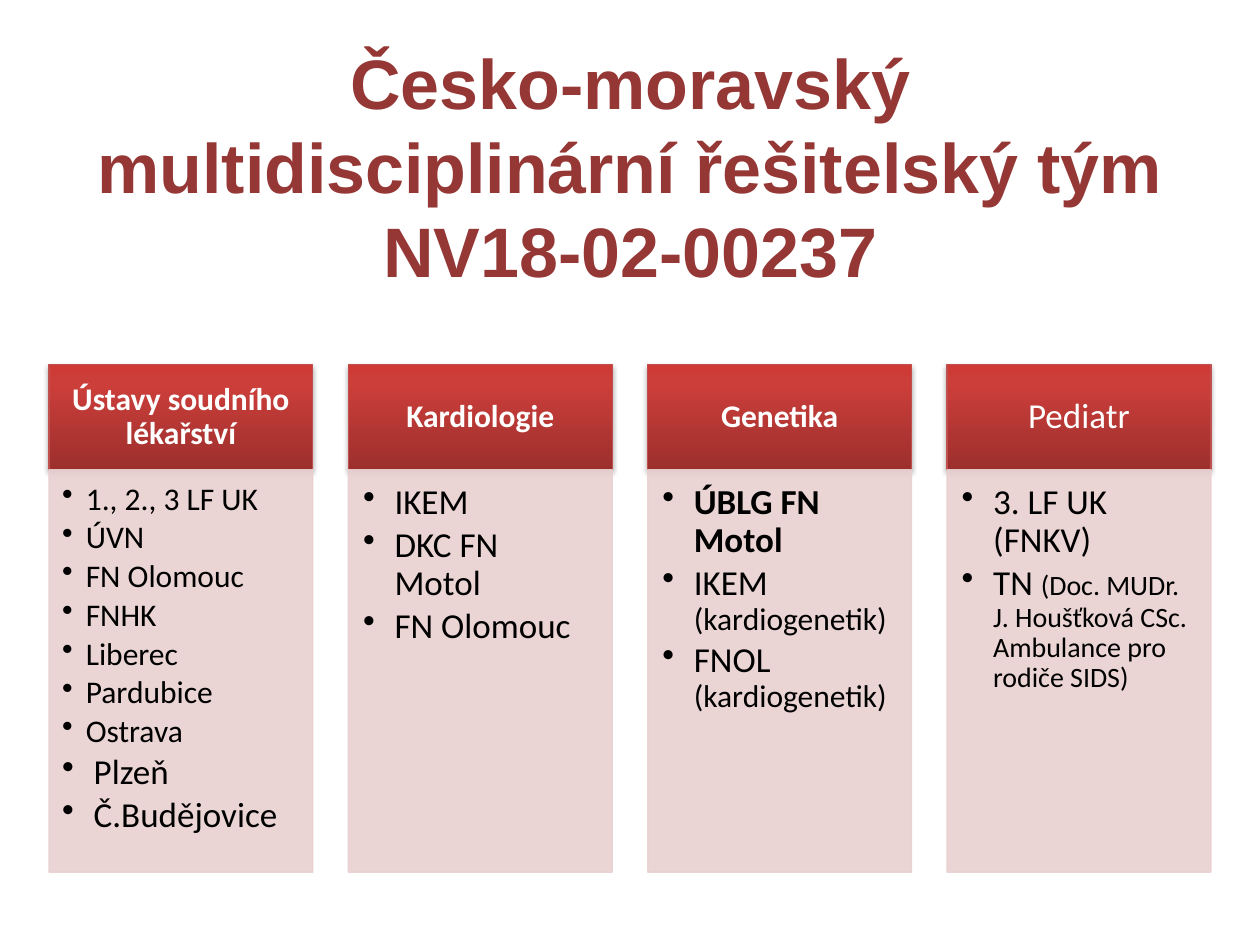
from pptx import Presentation
from pptx.dml.color import RGBColor
from pptx.enum.shapes import MSO_SHAPE
from pptx.enum.text import MSO_ANCHOR, PP_ALIGN
from pptx.oxml import parse_xml
from pptx.oxml.ns import nsdecls, qn
from pptx.oxml.xmlchemy import OxmlElement
from pptx.util import Pt

RECTANGLE = MSO_SHAPE.RECTANGLE
TOP, MIDDLE = MSO_ANCHOR.TOP, MSO_ANCHOR.MIDDLE
LEFT, CENTER = PP_ALIGN.LEFT, PP_ALIGN.CENTER

SLIDE_WIDTH, SLIDE_HEIGHT = 720, 540
SIDE_MARGIN, COLUMN_WIDTH = 28, 150.8
HEADER_TOP, HEADER_HEIGHT, BODY_HEIGHT = 208.4, 60, 230
HEADER_STOPS = [(0, "9C2F2D"), (80, "CB3E3A"), (100, "CE3B37")]

COLUMNS = [
    (("Ústavy soudního lékařství", 18, True), [
        *[[(place, 18, False)] for place in (
            "1., 2., 3 LF UK", "ÚVN", "FN Olomouc", "FNHK",
            "Liberec", "Pardubice", "Ostrava")],
        [("Plzeň", 20, False)],
        [("Č.Budějovice", 20, False)],
    ]),
    (("Kardiologie", 18, True), [
        [("IKEM", 20, False)],
        [("DKC FN Motol", 20, False)],
        [("FN Olomouc", 20, False)],
    ]),
    (("Genetika", 18, True), [
        [("ÚBLG FN Motol", 20, True)],
        [("IKEM ", 20, False), ("(kardiogenetik)", 18, False)],
        [("FNOL ", 20, False), ("(kardiogenetik)", 18, False)],
    ]),
    (("Pediatr", 20, False), [
        [("3. LF UK (FNKV)", 20, False)],
        [("TN ", 20, False),
         ("(Doc. MUDr. J. Houšťková CSc. Ambulance pro rodiče SIDS)", 16, False)],
    ]),
]


def rgb(value):
    """Turn a hex string into a colour."""
    return RGBColor.from_string(value)


def add_run(paragraph, text, size, bold, color, font="Calibri"):
    """Append one formatted run."""
    run = paragraph.add_run()
    run.text = text
    run.font.name, run.font.size, run.font.bold = font, Pt(size), bold
    run.font.color.rgb = rgb(color)


def set_frame(frame, anchor, margins):
    """Set wrapping, anchor and the left, top, right, bottom insets."""
    frame.word_wrap = True
    frame.vertical_anchor = anchor
    (frame.margin_left, frame.margin_top,
     frame.margin_right, frame.margin_bottom) = [Pt(m) for m in margins]


def add_rectangle(slide, left, top, height):
    """Add a column-wide rectangle."""
    return slide.shapes.add_shape(
        RECTANGLE, Pt(left), Pt(top), Pt(COLUMN_WIDTH), Pt(height))


def set_outline(shape, color):
    """Give a shape its thin outline."""
    shape.line.color.rgb = rgb(color)
    shape.line.width = Pt(0.75)


def set_header_style(header):
    """Apply the upward gradient, outline and soft shadow."""
    stops = "".join(
        f'<a:gs pos="{position * 1000}"><a:srgbClr val="{color}"/></a:gs>'
        for position, color in HEADER_STOPS)
    properties = header._element.spPr
    properties.append(parse_xml(
        f'<a:gradFill {nsdecls("a")} rotWithShape="1"><a:gsLst>{stops}</a:gsLst>'
        '<a:lin ang="16200000" scaled="0"/></a:gradFill>'))
    set_outline(header, "C0504D")
    properties.append(parse_xml(
        f'<a:effectLst {nsdecls("a")}><a:outerShdw blurRad="{Pt(3.1)}" '
        f'dist="{Pt(1.8)}" dir="5400000" rotWithShape="0"><a:srgbClr val="000000">'
        '<a:alpha val="35000"/></a:srgbClr></a:outerShdw></a:effectLst>'))


def set_body_style(body):
    """Apply the slightly transparent pink fill and outline."""
    body.shadow.inherit = False
    body.fill.solid()
    body.fill.fore_color.rgb = rgb("E8D0D0")
    set_outline(body, "E8D0D0")
    for color in body._element.spPr.iter(qn("a:srgbClr")):
        alpha = OxmlElement("a:alpha")
        alpha.set("val", "90000")
        color.append(alpha)


def set_bullet(paragraph, indent):
    """Give a paragraph a bullet with a hanging indent."""
    properties = paragraph._p.get_or_add_pPr()
    properties.set("marL", str(Pt(indent)))
    properties.set("indent", str(-Pt(indent)))
    bullet = OxmlElement("a:buChar")
    bullet.set("char", "•")
    properties.append(bullet)


def add_title(slide):
    """Add the two-part title."""
    title = slide.shapes.add_textbox(Pt(36), Pt(21.6), Pt(648), Pt(146.2))
    set_frame(title.text_frame, MIDDLE, (7.2, 3.6, 7.2, 3.6))
    paragraph = title.text_frame.paragraphs[0]
    paragraph.alignment = CENTER
    paragraph.line_spacing = Pt(48)
    style = (40, True, "953735", "Arial")
    add_run(paragraph, "Česko-moravský multidisciplinární řešitelský tým", *style)
    paragraph.add_line_break()
    add_run(paragraph, "NV18-02-00237", *style)


def add_header(slide, left, heading):
    """Add the red heading of a column."""
    text, size, bold = heading
    header = add_rectangle(slide, left, HEADER_TOP, HEADER_HEIGHT)
    set_header_style(header)
    set_frame(header.text_frame, MIDDLE, [size * k for k in (0.56, 0.32, 0.56, 0.32)])
    paragraph = header.text_frame.paragraphs[0]
    paragraph.alignment = CENTER
    paragraph.line_spacing = 0.9
    add_run(paragraph, text, size, bold, "FFFFFF")


def add_body(slide, left, items):
    """Add the bulleted list of a column."""
    body = add_rectangle(slide, left, HEADER_TOP + HEADER_HEIGHT, BODY_HEIGHT)
    set_body_style(body)
    frame = body.text_frame
    first_size = items[0][0][1]
    set_frame(frame, TOP, [first_size * k for k in (0.42, 0.42, 0.56, 0.63)])
    for index, runs in enumerate(items):
        paragraph = frame.add_paragraph() if index else frame.paragraphs[0]
        size = runs[0][1]
        set_bullet(paragraph, 18 if size == 20 else 13.5)
        paragraph.level = 1
        paragraph.alignment = LEFT
        paragraph.line_spacing = 0.9
        paragraph.space_before = Pt(0)
        paragraph.space_after = Pt(size * 0.15)
        for run in runs:
            add_run(paragraph, *run, "000000")


def main():
    """Build and save the slide."""
    presentation = Presentation()
    presentation.slide_width, presentation.slide_height = Pt(SLIDE_WIDTH), Pt(SLIDE_HEIGHT)
    slide = presentation.slides.add_slide(presentation.slide_layouts[6])
    add_title(slide)
    step = (SLIDE_WIDTH - 2 * SIDE_MARGIN - COLUMN_WIDTH) / (len(COLUMNS) - 1)
    for index, (heading, items) in enumerate(COLUMNS):
        left = SIDE_MARGIN + index * step
        add_header(slide, left, heading)
        add_body(slide, left, items)
    presentation.save("out.pptx")


if __name__ == "__main__":
    main()
